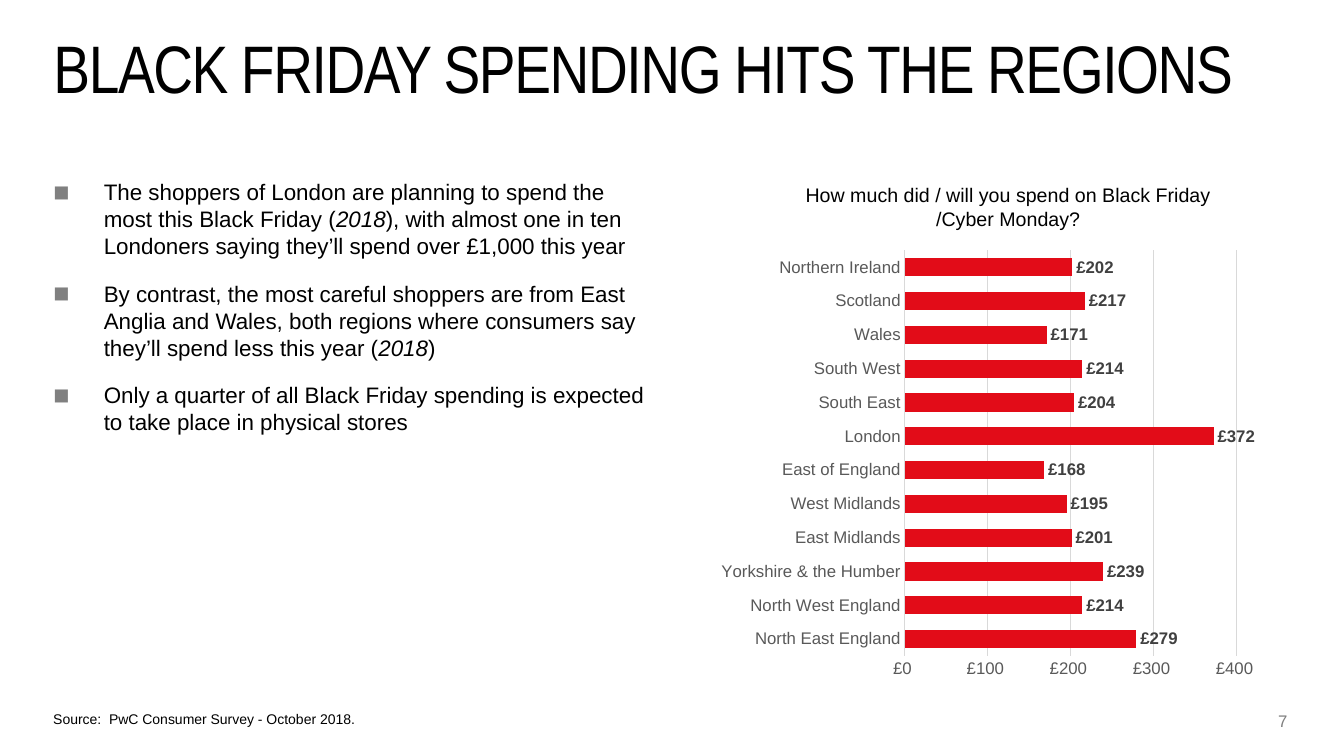
from lxml import etree
from pptx import Presentation
from pptx import util as u
from pptx.chart.data import CategoryChartData
from pptx.dml.color import RGBColor
from pptx.enum import chart as ch, text
from pptx.oxml import parse_xml
from pptx.oxml.ns import nsdecls, qn

W, H = 13.33, 7.5
COLORS = {"ink": "000000", "muted": "808080", "axis": "595959",
          "grid": "D9D9D9", "bar": "E20C18", "value": "404040"}
POUNDS = '"£"#,##0_);[Red]\\("£"#,##0\\)'

BULLETS = [
    ["The shoppers of London are planning to spend the most this Black Friday (", "2018",
     "), with almost one in ten Londoners saying they’ll spend over £1,000 this year"],
    ["By contrast, the most careful shoppers are from East Anglia and Wales, both regions "
     "where consumers say they’ll spend less this year (", "2018", ")"],
    ["Only a quarter of all Black Friday spending is expected to take place in physical stores"],
]
SPENDING = {
    "North East England": 279, "North West England": 214, "Yorkshire & the Humber": 239,
    "East Midlands": 201, "West Midlands": 195, "East of England": 168, "London": 372,
    "South East": 204, "South West": 214, "Wales": 171, "Scotland": 217,
    "Northern Ireland": 202,
}


def rgb(name):
    return RGBColor.from_string(COLORS[name])


def style_font(font, size, color="ink", name="Arial", bold=False, italic=False):
    font.size, font.name = u.Pt(size), name
    font.bold, font.italic = bold, italic
    font.color.rgb = rgb(color)


def add_run(p, words, **fmt):
    r = p.add_run()
    r.text = words
    style_font(r.font, **fmt)
    return r


def place(sp, box):
    sp.left, sp.top, sp.width, sp.height = (u.Inches(v) for v in box)


def set_frame(tf, inset=True):
    tf.word_wrap = True
    tf.auto_size = text.MSO_AUTO_SIZE.NONE
    tf.vertical_anchor = text.MSO_ANCHOR.TOP
    if not inset:
        tf.margin_left = tf.margin_right = tf.margin_top = tf.margin_bottom = 0


def add_text(s, box, words="", align=text.PP_ALIGN.LEFT, inset=True, **fmt):
    tf = s.shapes.add_textbox(*(u.Inches(v) for v in box)).text_frame
    set_frame(tf, inset)
    tf.paragraphs[0].alignment = align
    if words:
        add_run(tf.paragraphs[0], words, **fmt)
    return tf


def add_title(s, box, words):
    sp = s.shapes.title
    place(sp, box)
    set_frame(sp.text_frame, inset=False)
    p = sp.text_frame.paragraphs[0]
    p.alignment = text.PP_ALIGN.LEFT
    p.line_spacing = u.Pt(44)
    r = add_run(p, words, size=48, name="Arial Narrow")
    r.font._element.set("spc", "-100")


def add_bullets(s, box, items):
    tf = add_text(s, box, inset=False)
    for i, parts in enumerate(items):
        p = tf.add_paragraph() if i else tf.paragraphs[0]
        pPr = p._p.get_or_add_pPr()
        pPr.set("marL", str(u.Inches(0.5)))
        pPr.set("indent", str(-u.Inches(0.5)))
        color = etree.SubElement(pPr, qn("a:buClr"))
        etree.SubElement(color, qn("a:srgbClr"), val=COLORS["muted"])
        etree.SubElement(pPr, qn("a:buSzPct"), val="120000")
        etree.SubElement(pPr, qn("a:buFont"), typeface="Arial")
        etree.SubElement(pPr, qn("a:buChar"), char="■")
        p.space_after = u.Pt(15)
        for j, words in enumerate(parts):
            add_run(p, words, size=16, italic=j % 2 == 1)


def set_plot_area(chart, x, y, w, h):
    layout = parse_xml(
        f'<c:layout {nsdecls("c")}><c:manualLayout><c:layoutTarget val="inner"/>'
        '<c:xMode val="edge"/><c:yMode val="edge"/>'
        f'<c:x val="{x}"/><c:y val="{y}"/><c:w val="{w}"/><c:h val="{h}"/>'
        '</c:manualLayout></c:layout>')
    area = chart._chartSpace.chart.plotArea
    for old in area.findall(qn("c:layout")):
        area.remove(old)
    area.insert(0, layout)


def add_spending_chart(s, box):
    data = CategoryChartData(number_format=POUNDS)
    data.categories = list(SPENDING)
    data.add_series("Series 1", list(SPENDING.values()))
    chart = s.shapes.add_chart(ch.XL_CHART_TYPE.BAR_CLUSTERED,
                               *(u.Inches(v) for v in box), data).chart
    chart.has_legend = chart.has_title = False
    style_font(chart.font, 10)
    set_plot_area(chart, 0.35, 0.05, 0.57, 0.89)

    # Axes
    cat, val = chart.category_axis, chart.value_axis
    for axis in (cat, val):
        axis.major_tick_mark = axis.minor_tick_mark = ch.XL_TICK_MARK.NONE
        style_font(axis.tick_labels.font, 12, "axis")
    val.minimum_scale, val.maximum_scale, val.major_unit = 0, 400, 100
    val.tick_labels.number_format = POUNDS
    val.tick_labels.number_format_is_linked = False
    val.format.line.fill.background()
    val.has_major_gridlines = True
    for line in (cat.format.line, val.major_gridlines.format.line):
        line.color.rgb = rgb("grid")
        line.width = u.Pt(0.75)

    # Bars and their values
    plot = chart.plots[0]
    plot.gap_width, plot.vary_by_categories = 86, False
    bars = plot.series[0]
    bars.format.fill.solid()
    bars.format.fill.fore_color.rgb = rgb("bar")
    labels = bars.data_labels
    labels.show_value = True
    labels.position = ch.XL_LABEL_POSITION.OUTSIDE_END
    labels.number_format, labels.number_format_is_linked = POUNDS, False
    style_font(labels.font, 12, "value", bold=True)


def add_chart_panel(s, box):
    x, y, w, h = box
    heading_w = 4.8
    add_text(s, (x + 0.65, y, heading_w, 0.57),
             "How much did / will you spend on Black Friday /Cyber Monday?",
             align=text.PP_ALIGN.CENTER, size=14)
    add_spending_chart(s, (x, y + 0.49, w, h - 0.49))


def add_footer(s, box):
    x, y, w, h = box
    add_text(s, (x, y, w, h), "Source:  PwC Consumer Survey - October 2018.", size=10)
    add_text(s, (x + w - 0.56, y + 0.05, 0.47, 0.2), "7",
             align=text.PP_ALIGN.RIGHT, inset=False, size=12, color="muted")


def main():
    prs = Presentation()
    prs.slide_width, prs.slide_height = u.Inches(W), u.Inches(H)
    s = prs.slides.add_slide(prs.slide_layouts[5])
    left, top = 0.53, 1.77
    add_title(s, (left, 0.45, 12.2, 0.52), "BLACK FRIDAY SPENDING HITS THE REGIONS")
    add_bullets(s, (left, top, 5.94, 5.27), BULLETS)
    add_chart_panel(s, (6.95, top, 5.78, 5.01))
    add_footer(s, (left - 0.1, 7, 12.43, 0.27))
    prs.save("out.pptx")


if __name__ == "__main__":
    main()
